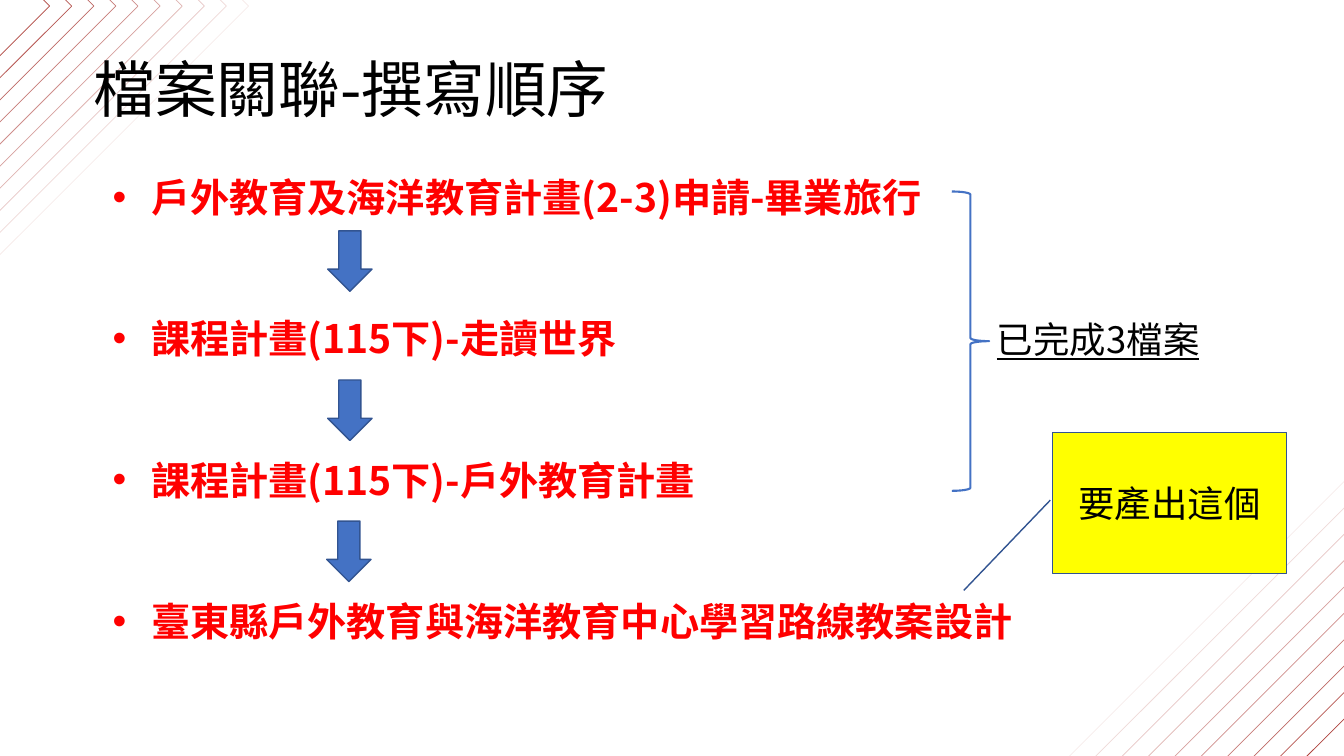
from lxml import etree
from pptx import Presentation
from pptx.dml.color import RGBColor
from pptx.enum.shapes import MSO_SHAPE as Shape
from pptx.enum.text import MSO_ANCHOR as Anchor, MSO_AUTO_SIZE as AutoSize, PP_ALIGN as Align
from pptx.oxml.ns import qn
from pptx.util import Inches, Pt

FONT = "Noto Sans CJK SC"
COLORS = {
    "text": "000000",
    "step": "FF0000",
    "arrow": "4472C4",
    "outline": "325491",
    "highlight": "FFFF00",
    "pattern": "AF443E",
}
STEPS = [
    "戶外教育及海洋教育計畫(2-3)申請-畢業旅行",
    "課程計畫(115下)-走讀世界",
    "課程計畫(115下)-戶外教育計畫",
    "臺東縣戶外教育與海洋教育中心學習路線教案設計",
]


class SlideBuilder:
    def __init__(self, presentation):
        self.slide = presentation.slides.add_slide(presentation.slide_layouts[5])

    def color(self, name):
        return RGBColor.from_string(COLORS[name])

    def format_text(self, paragraph, size, color="text", bold=False, underline=False):
        for run in paragraph.runs:
            font = run.font
            font.name, font.size = FONT, Pt(size)
            font.bold, font.underline = bold, underline
            font.color.rgb = self.color(color)
            east_asian = etree.SubElement(run._r.get_or_add_rPr(), qn("a:ea"))
            east_asian.set("typeface", FONT)

    def title(self, text, box, size):
        shape = self.slide.shapes.title
        shape.left, shape.top, shape.width, shape.height = map(Inches, box)
        frame = shape.text_frame
        frame.text = text
        frame.vertical_anchor = Anchor.MIDDLE
        frame.auto_size = AutoSize.NONE
        paragraph = frame.paragraphs[0]
        paragraph.alignment = Align.LEFT
        paragraph.line_spacing = 0.9
        self.format_text(paragraph, size)
        # Bring the title in front of the corner patterns
        shape.element.getparent().append(shape.element)

    def shape(self, kind, box, fill=None, line="outline", width=1, parent=None):
        shapes = (parent or self.slide).shapes
        shape = shapes.add_shape(kind, *map(Inches, box))
        shape.shadow.inherit = False
        if fill:
            shape.fill.solid()
            shape.fill.fore_color.rgb = self.color(fill)
        else:
            shape.fill.background()
        shape.line.color.rgb = self.color(line)
        shape.line.width = Pt(width)
        return shape

    def corner_pattern(self, center_x, center_y, largest, step, count=10):
        group = self.slide.shapes.add_group_shape()
        for index in range(count):
            side = largest - index * step
            box = (center_x - side / 2, center_y - side / 2, side, side)
            square = self.shape(Shape.RECTANGLE, box, line="pattern", width=0.5, parent=group)
            square.rotation = 315
            # Lines grow more opaque toward the corner
            color = square.line._ln.find(".//" + qn("a:srgbClr"))
            alpha = etree.SubElement(color, qn("a:alpha"))
            alpha.set("val", str((index + 1) * 100000 // count))

    def text_box(self, box):
        frame = self.slide.shapes.add_textbox(*map(Inches, box)).text_frame
        frame.word_wrap = True
        return frame

    def bullets(self, items, box, size):
        frame = self.text_box(box)
        frame.text = "\n".join(items)
        for index, paragraph in enumerate(frame.paragraphs):
            properties = paragraph._p.get_or_add_pPr()
            properties.set("marL", str(Inches(0.38)))
            properties.set("indent", str(Inches(-0.38)))
            etree.SubElement(properties, qn("a:buFont")).set("typeface", "Arial")
            etree.SubElement(properties, qn("a:buChar")).set("char", "•")
            paragraph.line_spacing = Pt(size * 1.8)
            paragraph.space_before = Pt(size * 1.8 if index else 0)
            self.format_text(paragraph, size, "step", bold=True)

    def label(self, text, box, size):
        frame = self.text_box(box)
        frame.text = text
        paragraph = frame.paragraphs[0]
        paragraph.line_spacing = Pt(size * 1.2)
        self.format_text(paragraph, size, underline=True)

    def callout(self, text, box, size, pointer):
        shape = self.shape(Shape.LINE_CALLOUT_1, box, fill="highlight")
        for index, value in enumerate(pointer):
            shape.adjustments[index] = value
        frame = shape.text_frame
        frame.text = text
        frame.vertical_anchor = Anchor.MIDDLE
        frame.paragraphs[0].alignment = Align.CENTER
        self.format_text(frame.paragraphs[0], size)


def main():
    presentation = Presentation()
    presentation.slide_width, presentation.slide_height = Inches(13.33), Inches(7.5)
    builder = SlideBuilder(presentation)

    # Corner decoration
    builder.corner_pattern(17.77, 7.89, 10.68, 0.37)
    builder.corner_pattern(-3.87, 0.06, 8.96, 0.31)

    # Title and the writing order
    builder.title("檔案關聯-撰寫順序", (0.83, 0.19, 11.5, 1.45), 44)
    builder.bullets(STEPS, (1.02, 1.44, 9.2, 5.1), 28)
    for left, top in ((3.25, 2.29), (3.25, 3.77), (3.24, 5.17)):
        builder.shape(Shape.DOWN_ARROW, (left, top, 0.44, 0.6), fill="arrow")

    # File to produce
    builder.callout("要產出這個", (10.44, 4.29, 2.32, 1.4), 26, (0.48, -0.01, 1.12, -0.38))

    # Finished files
    builder.shape(Shape.RIGHT_BRACE, (9.44, 1.9, 0.37, 2.97), line="arrow", width=1.5)
    builder.label("已完成3檔案", (9.79, 3.1, 2.54, 0.54), 26)

    presentation.save("out.pptx")


if __name__ == "__main__":
    main()
